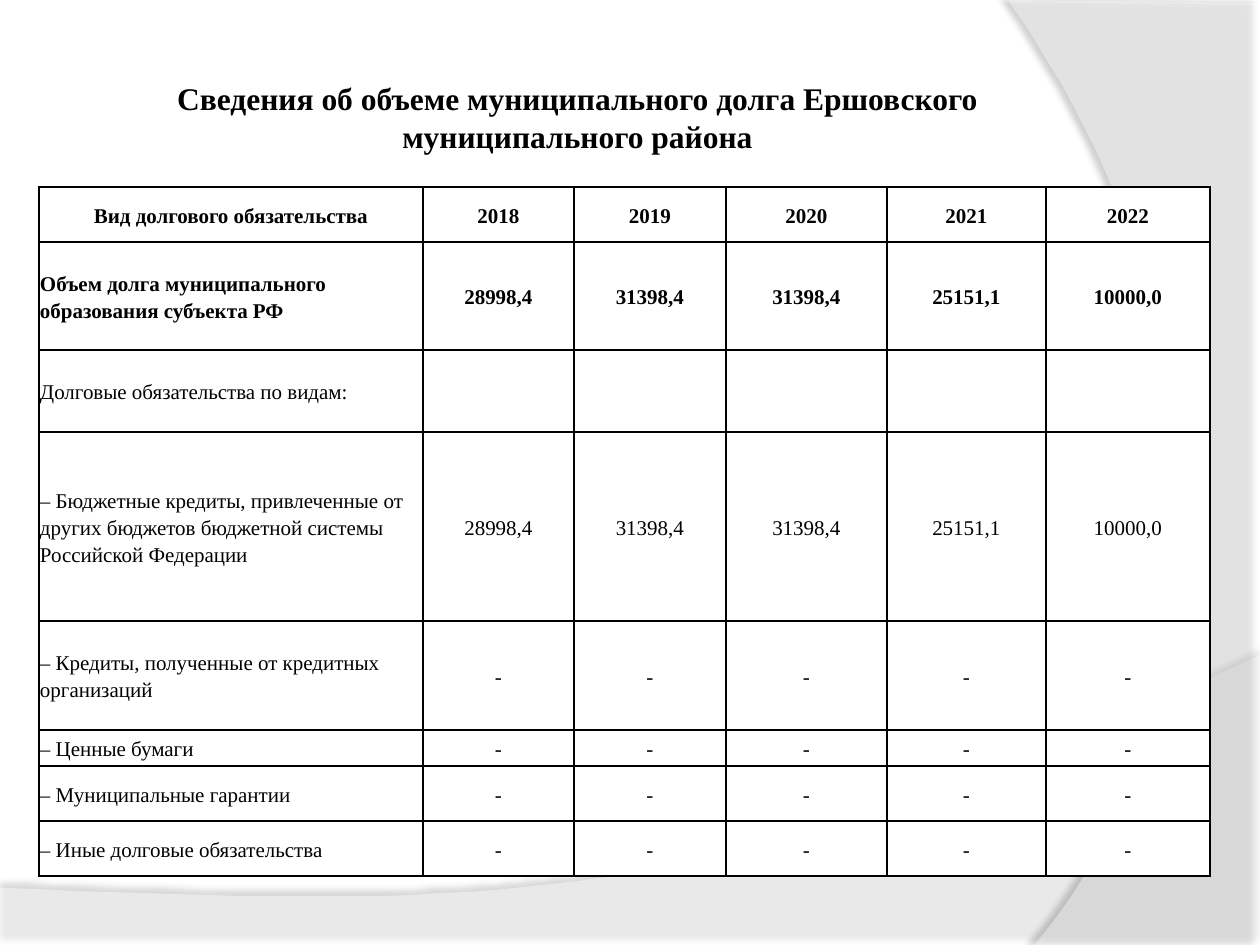
import pptx
import pptx.dml.color
import pptx.enum.text
import pptx.oxml
import pptx.oxml.ns
import pptx.util

SCALE = 914400 / 126
ALIGN = pptx.enum.text.PP_ALIGN
MIDDLE = pptx.enum.text.MSO_ANCHOR.MIDDLE
NAMESPACE = pptx.oxml.ns.nsdecls("a")


def px(length):
    return pptx.util.Emu(round(length * SCALE))


def color(value):
    return pptx.dml.color.RGBColor.from_string(value)


def bezier(start, control_1, control_2, end, steps=40):
    """Points along a cubic curve, without its start."""
    points = []
    for step in range(1, steps + 1):
        t = step / steps
        weights = ((1 - t) ** 3, 3 * t * (1 - t) ** 2, 3 * t * t * (1 - t), t ** 3)
        corners = (start, control_1, control_2, end)
        points.append(tuple(sum(w * corner[axis] for w, corner in zip(weights, corners))
                            for axis in (0, 1)))
    return points


class SlideBuilder:
    font_name = "Times New Roman"
    ink = "000000"
    paper = "FFFFFF"

    def __init__(self, slide):
        self.slide = slide

    def set_text(self, paragraph, text, size, bold, align):
        paragraph.text = text
        paragraph.alignment = align
        font = paragraph.font
        font.name, font.size, font.bold = self.font_name, pptx.util.Pt(size), bold
        font.color.rgb = color(self.ink)

    def wave(self, points, opacity, shadow_opacity, distance, direction):
        builder = self.slide.shapes.build_freeform(*points[0], scale=SCALE)
        builder.add_line_segments(points[1:], close=True)
        shape = builder.convert_to_shape()
        shape.fill.solid()
        shape.fill.fore_color.rgb = color(self.paper)
        shape.line.fill.background()
        properties = shape._element.spPr
        fill_color = properties.find(".//" + pptx.oxml.ns.qn("a:srgbClr"))
        fill_color.append(pptx.oxml.parse_xml(f'<a:alpha {NAMESPACE} val="{opacity * 1000}"/>'))
        properties.append(pptx.oxml.parse_xml(
            f'<a:effectLst {NAMESPACE}><a:outerShdw blurRad="{pptx.util.Pt(4)}" '
            f'dist="{pptx.util.Pt(distance)}" dir="{direction * 60000}" algn="ctr" '
            f'rotWithShape="0"><a:srgbClr val="{self.ink}">'
            f'<a:alpha val="{shadow_opacity * 1000}"/></a:srgbClr></a:outerShdw></a:effectLst>'))

    def title(self, text, left, top, width, height):
        frame = self.slide.shapes.add_textbox(px(left), px(top), px(width), px(height)).text_frame
        frame.word_wrap = True
        frame.vertical_anchor = MIDDLE
        frame.margin_left = frame.margin_right = frame.margin_top = frame.margin_bottom = px(6)
        self.set_text(frame.paragraphs[0], text, 18, True, ALIGN.CENTER)

    def border(self, cell):
        properties = cell._tc.get_or_add_tcPr()
        for index, side in enumerate(("lnL", "lnR", "lnT", "lnB")):
            properties.insert(index, pptx.oxml.parse_xml(
                f'<a:{side} {NAMESPACE} w="{pptx.util.Pt(1)}"><a:solidFill>'
                f'<a:srgbClr val="{self.ink}"/></a:solidFill></a:{side}>'))

    def table(self, rows, left, top, widths, heights, bold_rows):
        table = self.slide.shapes.add_table(len(rows), len(widths), px(left), px(top),
                                            px(sum(widths)), px(sum(heights))).table
        table.first_row = table.horz_banding = False
        for column, width in zip(table.columns, widths):
            column.width = px(width)
        for row, height in zip(table.rows, heights):
            row.height = px(height)
        for row_index, values in enumerate(rows):
            for column_index, value in enumerate(values):
                cell = table.cell(row_index, column_index)
                cell.fill.solid()
                cell.fill.fore_color.rgb = color(self.paper)
                self.border(cell)
                cell.vertical_anchor = MIDDLE
                cell.margin_left = cell.margin_right = px(1)
                cell.margin_top = cell.margin_bottom = px(1)
                is_label = column_index == 0 and row_index > 0
                paragraph = cell.text_frame.paragraphs[0]
                paragraph.line_spacing = 1.15
                self.set_text(paragraph, value, 12, row_index < bold_rows,
                              ALIGN.LEFT if is_label else ALIGN.CENTER)


def main():
    presentation = pptx.Presentation()
    presentation.slide_width, presentation.slide_height = px(1260), px(945)
    builder = SlideBuilder(presentation.slides.add_slide(presentation.slide_layouts[6]))

    # Background waves
    builder.wave([(0, 888), (0, 946), (1260, 946), (1260, 655)]
                 + bezier((1260, 655), (704, 919), (493, 906), (0, 888))[:-1],
                 45, 35, 3.5, 270)
    builder.wave([(1260, 3), (1260, 945), (1034, 945)]
                 + bezier((1034, 945), (1178, 780), (1283, 391), (1008, 0)),
                 40, 45, 4, 180)

    # Title
    builder.title("Сведения об объеме муниципального долга Ершовского муниципального района",
                  63, 38, 1029, 158)

    # Debt by type and year
    debt = ["28998,4", "31398,4", "31398,4", "25151,1", "10000,0"]
    none = ["-"] * 5
    rows = [
        ["Вид долгового обязательcтва", "2018", "2019", "2020", "2021", "2022"],
        ["Объем долга муниципального образования субъекта РФ", *debt],
        ["Долговые обязательства по видам:", *[""] * 5],
        ["– Бюджетные кредиты, привлеченные от\nдругих бюджетов бюджетной системы\n"
         "Российской Федерации", *debt],
        ["– Кредиты, полученные от кредитных организаций", *none],
        ["– Ценные бумаги", *none],
        ["– Муниципальные гарантии", *none],
        ["– Иные долговые обязательства", *none],
    ]
    builder.table(rows, 39, 187, [384, 151, 152, 161, 159, 164],
                  [55, 108, 82, 189, 109, 36, 55, 55], bold_rows=2)

    presentation.save("out.pptx")


if __name__ == "__main__":
    main()
